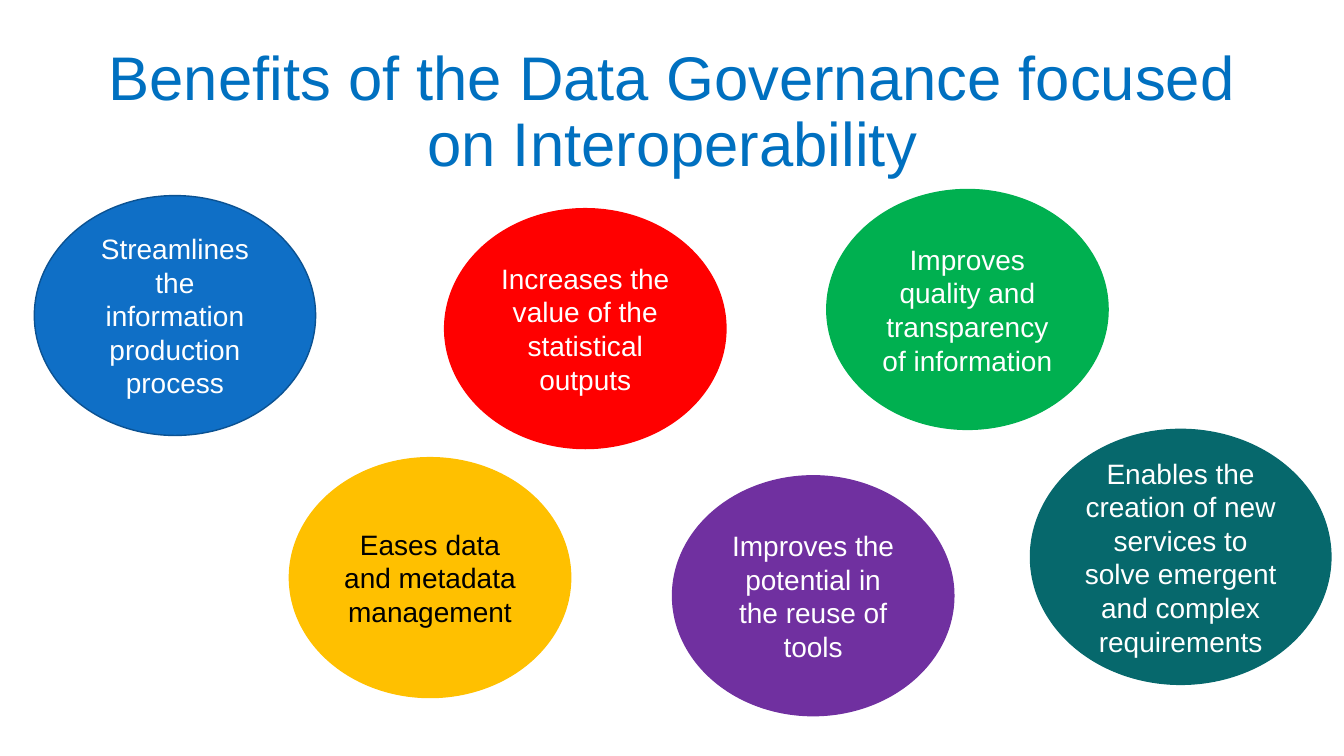
from pptx import Presentation, util as u
from pptx.dml.color import RGBColor
from pptx.enum import shapes, text

FONT = "Arial"
WHITE, BLACK = "FFFFFF", "000000"
SIZE = (2.79, 2.38)
LARGE = (2.98, 2.53)

# position, size, fill, line, text colour, wording
BENEFITS = [
    ((0.34, 1.94), SIZE, "0F6FC6", "0B5292", WHITE,
     "Streamlines the information production process"),
    ((4.41, 2.07), SIZE, "FF0000", "FF0000", WHITE,
     "Increases the value of the statistical outputs"),
    ((10.22, 4.26), LARGE, "06686C", "06686C", WHITE,
     "Enables the creation of new services to solve emergent and complex requirements"),
    ((6.67, 4.72), SIZE, "7030A0", "7030A0", WHITE,
     "Improves the potential in the reuse of tools"),
    ((8.2, 1.88), SIZE, "00B050", "00B050", WHITE,
     "Improves quality and transparency of information"),
    ((2.87, 4.54), SIZE, "FFC000", "FFC000", BLACK,
     "Eases data and metadata management"),
]


def rgb(value):
    return RGBColor.from_string(value)


def write(sp, words, size, color):
    """Put one centred run in the middle of a shape."""
    tf = sp.text_frame
    tf.word_wrap = True
    tf.auto_size = text.MSO_AUTO_SIZE.NONE
    tf.vertical_anchor = text.MSO_ANCHOR.MIDDLE
    p = tf.paragraphs[0]
    p.alignment = text.PP_ALIGN.CENTER
    r = p.add_run()
    r.text = words
    r.font.name = FONT
    r.font.size = u.Pt(size)
    r.font.color.rgb = rgb(color)
    return p


def add_title(s, box, words):
    sp = s.shapes.title
    sp.left, sp.top, sp.width, sp.height = map(u.Inches, box)
    write(sp, words, 44, "0070C0").line_spacing = 0.9


def add_benefit(s, box, fill, line, color, words):
    sp = s.shapes.add_shape(shapes.MSO_SHAPE.OVAL, *map(u.Inches, box))
    sp.shadow.inherit = False
    sp.fill.solid()
    sp.fill.fore_color.rgb = rgb(fill)
    sp.line.color.rgb = rgb(line)
    sp.line.width = u.Pt(1)
    write(sp, words, 20, color)


def main():
    prs = Presentation()
    prs.slide_width, prs.slide_height = u.Inches(13.33), u.Inches(7.5)
    s = prs.slides.add_slide(prs.slide_layouts[5])
    add_title(s, (0.92, 0.4, 11.5, 1.45),
              "Benefits of the Data Governance focused on Interoperability")
    for position, size, *style in BENEFITS:
        add_benefit(s, position + size, *style)
    prs.save("out.pptx")


if __name__ == "__main__":
    main()
